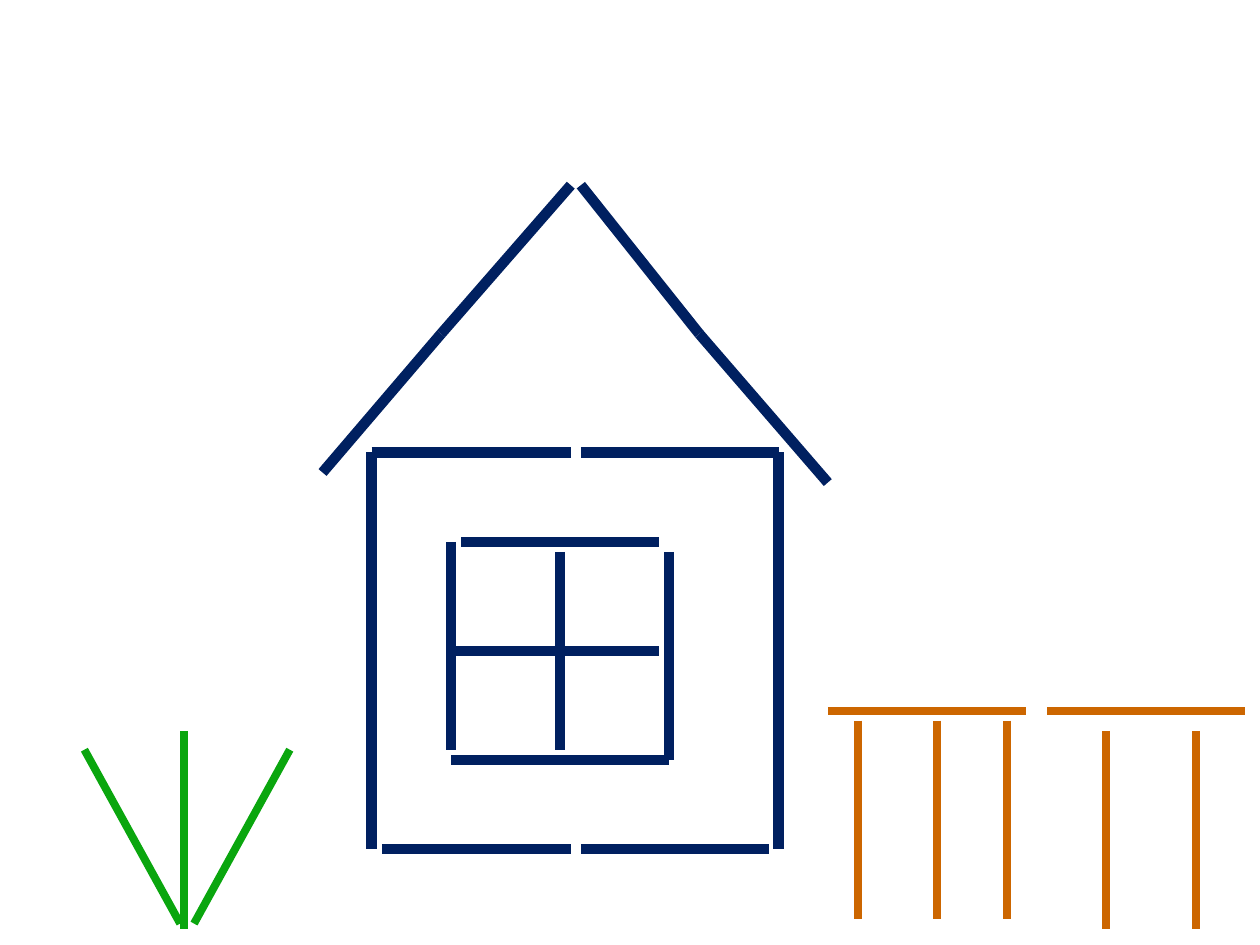
import pptx
import pptx.dml.color
import pptx.enum.shapes
import pptx.util
from lxml import etree
from pptx.util import Inches

NAVY = pptx.dml.color.RGBColor(0x00, 0x20, 0x60)
BROWN = pptx.dml.color.RGBColor(0xCC, 0x66, 0x00)
GREEN = pptx.dml.color.RGBColor(0x0A, 0xA6, 0x0E)
HOUSE = {"rgb": NAVY, "width": pptx.util.Pt(6)}
FENCE = {"rgb": BROWN, "width": pptx.util.Pt(4.5)}
GRASS = {"rgb": GREEN, "width": pptx.util.Pt(4.5)}
EFFECT = "{http://schemas.openxmlformats.org/drawingml/2006/main}effectLst"


def draw(slide, box, sticks, style):
    """Draw sticks (x1, y1, x2, y2), measured from the box's top left corner."""
    left, top = box[:2]
    for x1, y1, x2, y2 in sticks:
        stick = slide.shapes.add_connector(
            pptx.enum.shapes.MSO_CONNECTOR.STRAIGHT,
            Inches(left + x1), Inches(top + y1),
            Inches(left + x2), Inches(top + y2))
        for name, value in style.items():
            owner = stick.line.color if name == "rgb" else stick.line
            setattr(owner, name, value)
        etree.SubElement(stick._element.spPr, EFFECT)


def add_walls(slide, box):
    wide, high = box[2:]
    half, gap = high / 2, 0.08
    mid = 1.58
    sides = [(x, y, x, y + half) for x in (0, wide) for y in (0, half)]
    beams = [(inset + a, y, b - inset * last, y)
             for y, inset in ((0, 0), (high, gap))
             for a, b, last in ((0, mid, 0), (mid + gap - inset, wide, 1))]
    draw(slide, box, sides + beams, HOUSE)


def add_roof(slide, box):
    wide, high = box[2:]
    bend = 1.18
    left = [(0, high - 0.08), (0.94, bend), (1.97, 0)]
    right = [(2.05, 0), (2.99, bend), (wide, high)]
    draw(slide, box, [a + b for side in (left, right)
                      for a, b in zip(side, side[1:])], HOUSE)


def add_window(slide, box):
    wide, high = box[2:]
    gap = 0.08
    draw(slide, box, [
        (0, 0, 0, high - gap),
        (gap, 0, wide - gap, 0),
        (wide, gap, wide, high),
        (0, high, wide, high),
        (0, high / 2, wide - gap, high / 2),
        (wide / 2, gap, wide / 2, high - gap)], HOUSE)


def add_fence(slide, box):
    wide, high = box[2:]
    rail = post = 1.57
    rails = [(x, 0, x + rail, 0) for x in (0, wide - rail)]
    posts = [(x, foot - post, x, foot)
             for foot, spots in ((high - 0.08, (0.24, 0.87, 1.42)),
                                 (high, (2.21, 2.92)))
             for x in spots]
    draw(slide, box, rails + posts, FENCE)


def add_grass(slide, box):
    wide, high = box[2:]
    stem, tip, foot = 0.79, 0.15, high - 0.04
    draw(slide, box, [
        (stem, 0, stem, high),
        (stem + 0.08, foot, wide, tip),
        (0, tip, stem - 0.03, foot)], GRASS)


def main():
    deck = pptx.Presentation()
    deck.slide_width, deck.slide_height = Inches(10), Inches(7.5)
    slide = deck.slides.add_slide(deck.slide_layouts[6])
    add_walls(slide, (2.95, 3.59, 3.23, 3.15))
    add_roof(slide, (2.56, 1.47, 4.01, 2.36))
    add_window(slide, (3.58, 4.3, 1.73, 1.73))
    add_fence(slide, (6.57, 5.64, 3.31, 1.73))
    add_grass(slide, (0.67, 5.8, 1.63, 1.57))
    deck.save("out.pptx")


if __name__ == "__main__":
    main()
